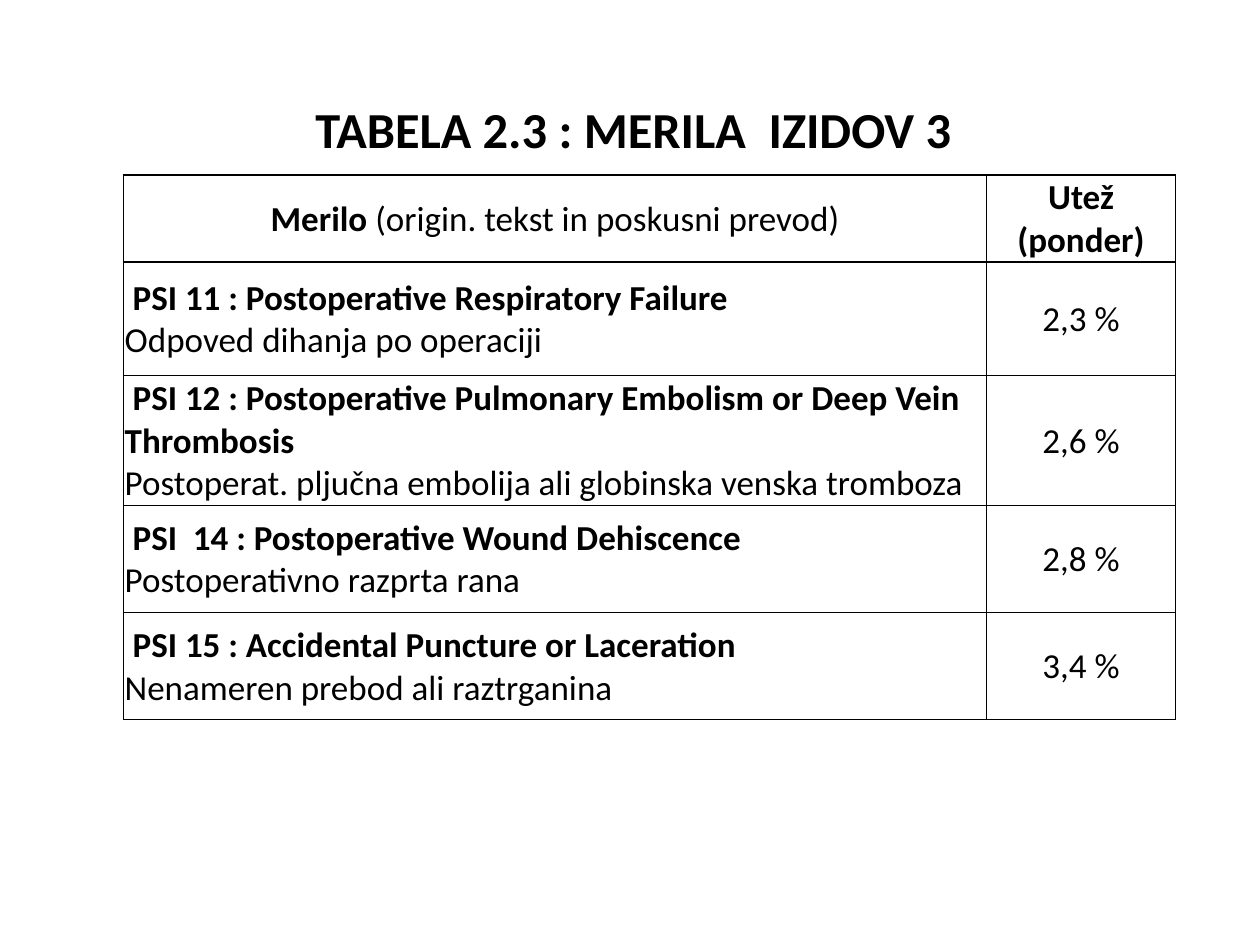
from lxml import etree
from pptx import Presentation
from pptx.dml.color import RGBColor
from pptx.enum.text import MSO_ANCHOR, PP_ALIGN
from pptx.oxml.ns import qn
from pptx.util import Inches, Pt

CENTER, LEFT = PP_ALIGN.CENTER, PP_ALIGN.LEFT
MIDDLE = MSO_ANCHOR.MIDDLE
COLORS = {"text": "000000", "border": "000000"}
FONT = "Calibri"
COLUMN_WIDTHS = [6.85, 1.5]
ROW_HEIGHTS = [0.52, 0.9, 1, 0.85, 0.85]
CRITERIA = [
    (" PSI 11 : Postoperative Respiratory Failure",
     "Odpoved dihanja po operaciji", "2,3 %"),
    (" PSI 12 : Postoperative Pulmonary Embolism or Deep Vein Thrombosis",
     "Postoperat. pljučna embolija ali globinska venska tromboza", "2,6 %"),
    (" PSI  14 : Postoperative Wound Dehiscence",
     "Postoperativno razprta rana", "2,8 %"),
    (" PSI 15 : Accidental Puncture or Laceration",
     "Nenameren prebod ali raztrganina", "3,4 %"),
]


def add_text(para, text, size=20, bold=False, align=LEFT):
    """Append a formatted span to a paragraph."""
    para.alignment = align
    span = para.add_run()
    span.text = text
    span.font.name = FONT
    span.font.size = Pt(size)
    span.font.bold = bold
    span.font.color.rgb = RGBColor.from_string(COLORS["text"])


def format_cell(cell):
    """Give a cell thin margins, no fill and a border on every side."""
    cell.vertical_anchor = MIDDLE
    cell.margin_left = cell.margin_right = cell.margin_top = Inches(0.01)
    cell.margin_bottom = 0
    properties = cell._tc.get_or_add_tcPr()
    for side in ("a:lnL", "a:lnR", "a:lnT", "a:lnB"):
        line = etree.SubElement(properties, qn(side), w=str(Pt(1)))
        fill = etree.SubElement(line, qn("a:solidFill"))
        etree.SubElement(fill, qn("a:srgbClr"), val=COLORS["border"])
    cell.fill.background()


def place_title(page, left, top, width, height):
    """Place the slide title in the given box."""
    title = page.shapes.title
    title.left, title.top = Inches(left), Inches(top)
    title.width, title.height = Inches(width), Inches(height)
    title.text_frame.vertical_anchor = MIDDLE
    add_text(title.text_frame.paragraphs[0], "TABELA 2.3 : MERILA  IZIDOV 3 ",
             size=28.8, bold=True, align=CENTER)


def place_criteria_table(page, left, top):
    """Place the table of criteria and weights from the given corner."""
    table = page.shapes.add_table(
        len(ROW_HEIGHTS), len(COLUMN_WIDTHS), Inches(left), Inches(top),
        Inches(sum(COLUMN_WIDTHS)), Inches(sum(ROW_HEIGHTS))).table
    table.first_row = table.horz_banding = False
    for column, width in zip(table.columns, COLUMN_WIDTHS):
        column.width = Inches(width)
    for row, height in zip(table.rows, ROW_HEIGHTS):
        row.height = Inches(height)
    for cell in table.iter_cells():
        format_cell(cell)

    heading = table.cell(0, 0).text_frame.paragraphs[0]
    add_text(heading, "Merilo ", bold=True, align=CENTER)
    add_text(heading, "(origin. tekst in poskusni prevod)", align=CENTER)
    add_text(table.cell(0, 1).text_frame.paragraphs[0], "Utež (ponder)",
             bold=True, align=CENTER)
    for index, (name, translation, weight) in enumerate(CRITERIA, start=1):
        frame = table.cell(index, 0).text_frame
        add_text(frame.paragraphs[0], name, bold=True)
        add_text(frame.add_paragraph(), translation)
        add_text(table.cell(index, 1).text_frame.paragraphs[0], weight,
                 align=CENTER)


def main():
    """Build the deck and save it."""
    deck = Presentation()
    deck.slide_width, deck.slide_height = Inches(10), Inches(7.5)
    page = deck.slides.add_slide(deck.slide_layouts[5])
    place_title(page, 0.43, 0.75, 9.29, 0.54)
    place_criteria_table(page, 0.98, 1.39)
    deck.save("out.pptx")


if __name__ == "__main__":
    main()
